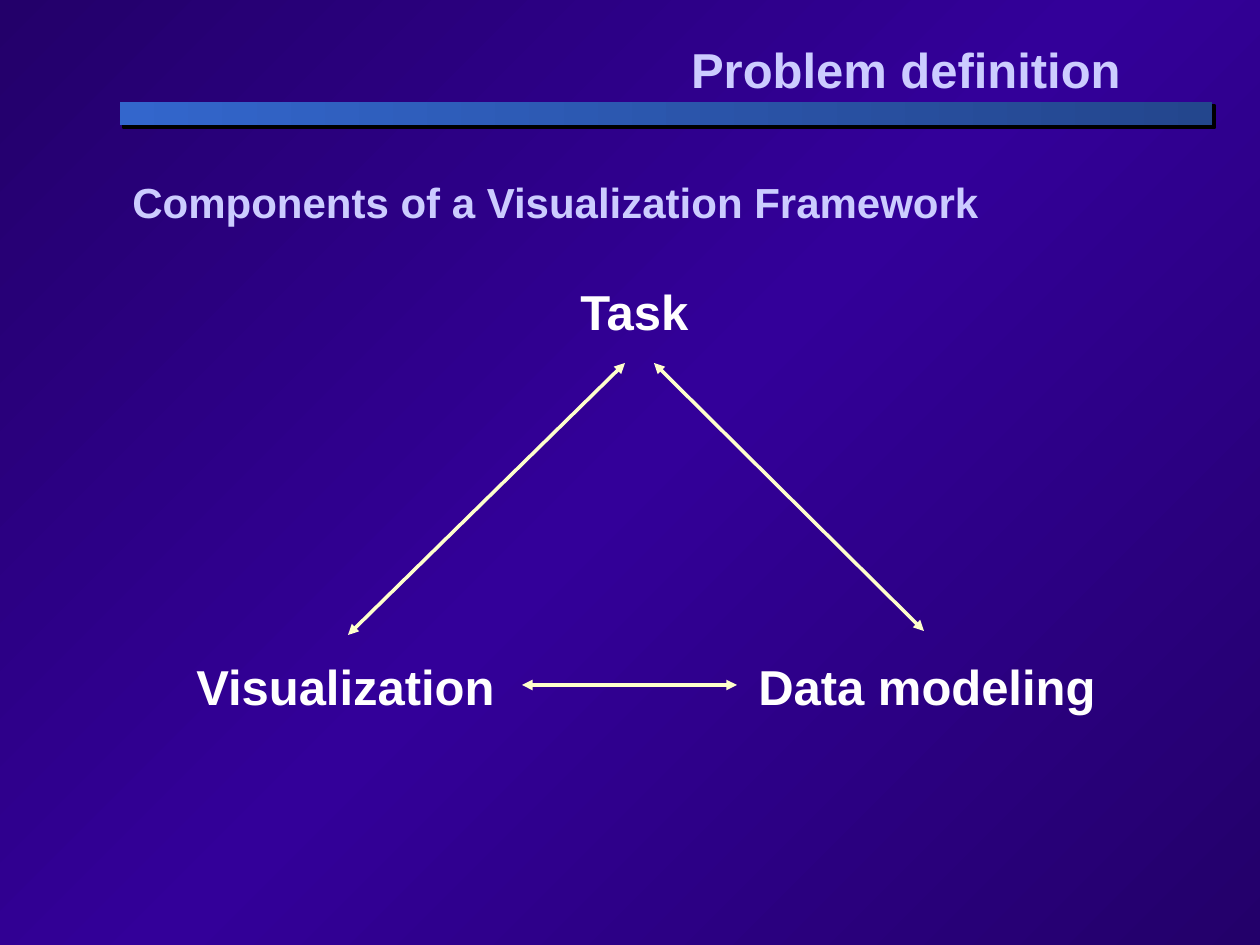
import copy

import pptx
import pptx.dml.color
import pptx.enum.shapes
import pptx.enum.text
import pptx.oxml.ns
import pptx.util
from lxml import etree

PX = 914400 / 126  # EMU in one px

THEME = {
    "font": "Arial",
    "title": {"size": 28, "color": "CCCCFF"},
    "subtitle": {"size": 24, "color": "CCCCFF"},
    "node": {"size": 28, "color": "FFFFFF"},
    "arrow": {"width": 2, "color": "FFFFCC"},
    "background": ("23006A", "330099", "23006A"),
    "bar": ("3366CC", "23468D"),
    "bar_shadow": "000000",
}


def emu(*lengths):
    return [pptx.util.Emu(round(n * PX)) for n in lengths]


def rgb(color):
    return pptx.dml.color.RGBColor.from_string(color)


def set_gradient(fill, colors, angle):
    """Spread the colours evenly; the angle runs counter-clockwise."""
    fill.gradient()
    fill.gradient_angle = angle
    stops = fill.gradient_stops
    gs_list = stops[0]._gs.getparent()
    for _ in colors[2:]:
        gs_list.append(copy.deepcopy(gs_list[-1]))
    for i, (stop, color) in enumerate(zip(fill.gradient_stops, colors)):
        stop.position = i / (len(colors) - 1)
        stop.color.rgb = rgb(color)


def add_text(s, box, text, style, align="LEFT", anchor="TOP", wrap=False):
    tf = s.shapes.add_textbox(*emu(*box)).text_frame
    tf.word_wrap = wrap
    tf.vertical_anchor = getattr(pptx.enum.text.MSO_ANCHOR, anchor)
    if not wrap:
        tf.auto_size = pptx.enum.text.MSO_AUTO_SIZE.SHAPE_TO_FIT_TEXT
    p = tf.paragraphs[0]
    p.alignment = getattr(pptx.enum.text.PP_ALIGN, align)
    r = p.add_run()
    r.text = text
    values = {"name": THEME["font"], "size": pptx.util.Pt(style["size"]), "bold": True}
    for key, value in values.items():
        setattr(r.font, key, value)
    r.font.color.rgb = rgb(style["color"])


def add_bar(s, box):
    sp = s.shapes.add_shape(pptx.enum.shapes.MSO_SHAPE.RECTANGLE, *emu(*box))
    sp.shadow.inherit = False
    return sp


def add_arrow(s, x1, y1, x2, y2):
    style = THEME["arrow"]
    line = s.shapes.add_connector(
        pptx.enum.shapes.MSO_CONNECTOR.STRAIGHT, *emu(x1, y1, x2, y2))
    line.line.width = pptx.util.Pt(style["width"])
    line.line.color.rgb = rgb(style["color"])
    # Arrowheads at both ends, no shadow
    qn = pptx.oxml.ns.qn
    ln = line.line._get_or_add_ln()
    for end in ("a:headEnd", "a:tailEnd"):
        etree.SubElement(ln, qn(end), type="triangle")
    etree.SubElement(line._element.spPr, qn("a:effectLst"))


def add_header(s, x, y, w, h):
    # Rule with an offset black shadow
    bar_y, bar_h = y + h - 23, 23
    shadow = add_bar(s, (x + 3, bar_y + 3, w, bar_h))
    shadow.fill.solid()
    shadow.fill.fore_color.rgb = rgb(THEME["bar_shadow"])
    shadow.line.color.rgb = rgb(THEME["bar_shadow"])
    shadow.line.width = pptx.util.Pt(1)
    bar = add_bar(s, (x, bar_y, w, bar_h))
    set_gradient(bar.fill, THEME["bar"], 0)
    bar.line.fill.background()
    # Title
    add_text(s, (x + 20, y, w - 99, 53), "Problem definition",
             THEME["title"], "RIGHT", "MIDDLE", wrap=True)


def add_triangle(s, x, y, w, h):
    # Corner labels
    node_h = 71
    base = h - node_h
    nodes = [("Task", 384, 0, 137), ("Visualization", 0, base, 325),
             ("Data modeling", w - 363, base, 363)]
    for text, left, top, width in nodes:
        add_text(s, (x + left, y + top, width, node_h), text, THEME["node"])
    # Sides
    middle = base + node_h // 2
    for x1, y1, x2, y2 in [(441, 88, 164, 360), (470, 88, 740, 356),
                           (338, middle, 553, middle)]:
        add_arrow(s, x + x1, y + y1, x + x2, y + y2)


def main():
    prs = pptx.Presentation()
    prs.slide_width, prs.slide_height = emu(1260, 945)
    s = prs.slides.add_slide(prs.slide_layouts[6])
    set_gradient(s.background.fill, THEME["background"], 315)
    add_header(s, 120, 42, 1092, 83)
    add_text(s, (120, 170, 872, 63), "Components of a Visualization Framework",
             THEME["subtitle"])
    add_triangle(s, 184, 275, 925, 446)
    prs.save("out.pptx")


if __name__ == "__main__":
    main()
